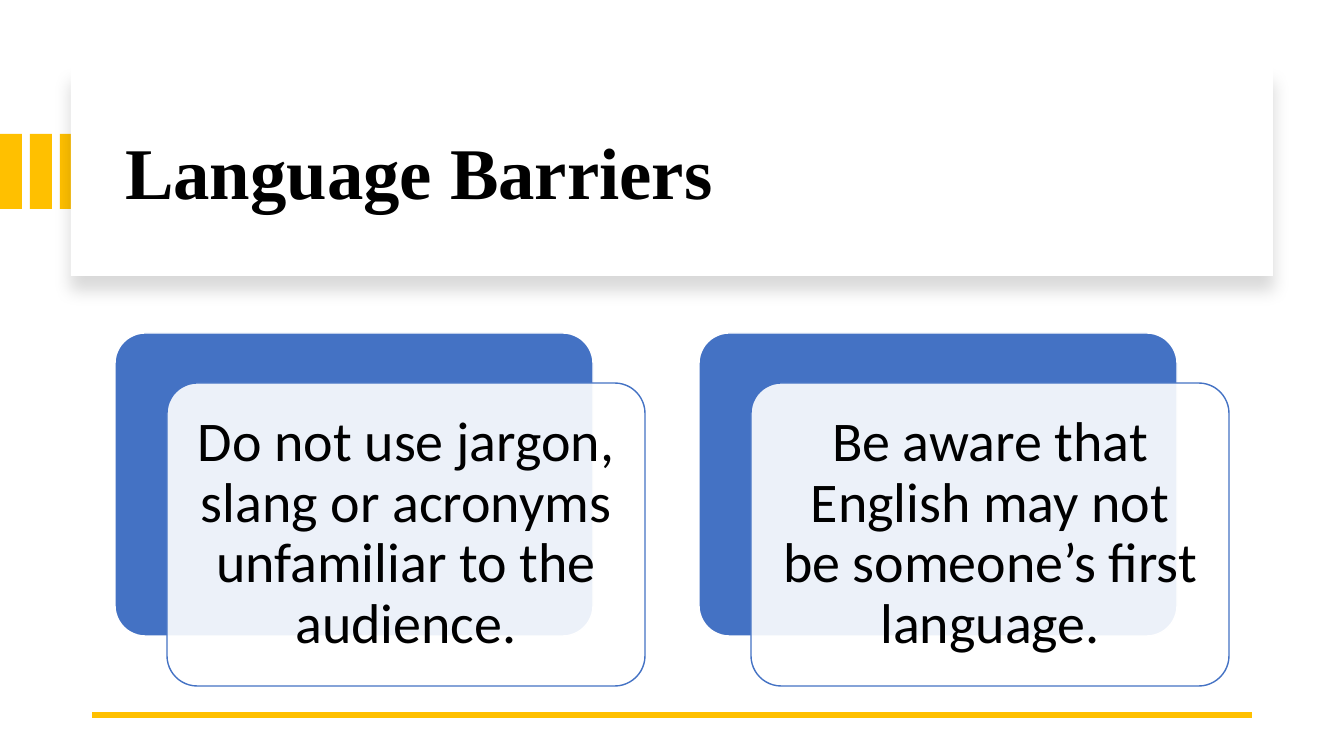
from lxml import etree
from pptx import Presentation
from pptx.dml.color import RGBColor
from pptx.enum.shapes import MSO_CONNECTOR as Connector, MSO_SHAPE as Shape
from pptx.enum.text import MSO_ANCHOR as Anchor, PP_ALIGN as Align
from pptx.oxml import parse_xml
from pptx.oxml.ns import nsdecls, qn
from pptx.util import Emu, Pt

PX = 914400 / 100.8
GOLD, BLUE, WHITE, BLACK = "FFC000", "4472C4", "FFFFFF", "000000"


def px(*lengths):
    return [Emu(round(length * PX)) for length in lengths]


def write(box, text, font, size, bold=False, align=Align.LEFT, inset=10):
    frame = box.text_frame
    frame.word_wrap = True
    frame.vertical_anchor = Anchor.MIDDLE
    frame.margin_left, frame.margin_right = px(inset, inset)
    frame.margin_top, frame.margin_bottom = px(inset, inset)
    para = frame.paragraphs[0]
    para.alignment = align
    para.line_spacing = 0.9
    span = para.add_run()
    span.text = text
    span.font.name = font
    span.font.size = Pt(size)
    span.font.bold = bold
    span.font.color.rgb = RGBColor.from_string(BLACK)


deck = Presentation()
deck.slide_width, deck.slide_height = px(1344, 756)
page = deck.slides.add_slide(deck.slide_layouts[5])
title = page.shapes.title

# Gold stripes, then the white title card over them
bars = [(30 * i, 134, 22, 75, GOLD) for i in range(3)]
for left, top, width, height, color in bars + [(71, 67, 1202, 209, WHITE)]:
    bar = page.shapes.add_shape(Shape.RECTANGLE, *px(left, top, width, height))
    bar.shadow.inherit = False
    bar.fill.solid()
    bar.fill.fore_color.rgb = RGBColor.from_string(color)
    bar.line.fill.background()
title_card = bar
effects = title_card.element.spPr.find(qn("a:effectLst"))
effects.append(parse_xml(
    f'<a:outerShdw {nsdecls("a")} blurRad="{Pt(11)}" dist="{Pt(10)}" dir="5400000" '
    'algn="t" rotWithShape="0"><a:srgbClr val="000000"><a:alpha val="15000"/>'
    '</a:srgbClr></a:outerShdw>'))

# Title, raised above its card
title.left, title.top, title.width, title.height = px(115, 90, 1122, 171)
write(title, "Language Barriers", "Times New Roman", 52, bold=True)
title.element.getparent().append(title.element)

# Gold rule at the bottom
rule = page.shapes.add_connector(Connector.STRAIGHT, *px(1252, 715, 92, 715))
rule.line.color.rgb = RGBColor.from_string(GOLD)
rule.line.width = Pt(4.5)
etree.SubElement(rule.element.spPr, qn("a:effectLst"))

# Two message cards: blue backing, translucent front, text
messages = ["Do not use jargon, slang or acronyms unfamiliar to the audience.",
            "Be aware that English may not be someone’s first language."]
for i, message in enumerate(messages):
    left = 115 + 584 * i
    for dx, top, fill, line in [(0, 333, BLUE, WHITE), (52, 383, WHITE, BLUE)]:
        card = page.shapes.add_shape(Shape.ROUNDED_RECTANGLE, *px(left + dx, top, 478, 303))
        card.adjustments[0] = 0.1
        card.shadow.inherit = False
        card.fill.solid()
        card.fill.fore_color.rgb = RGBColor.from_string(fill)
        card.line.color.rgb = RGBColor.from_string(line)
        card.line.width = Pt(1)
    front_color = card.element.spPr.find(qn("a:solidFill")).find(qn("a:srgbClr"))
    etree.SubElement(front_color, qn("a:alpha"), val="90000")
    box = page.shapes.add_textbox(*px(left + 61, 392, 460, 285))
    write(box, message, "Calibri", 40, align=Align.CENTER, inset=17)

deck.save("out.pptx")
